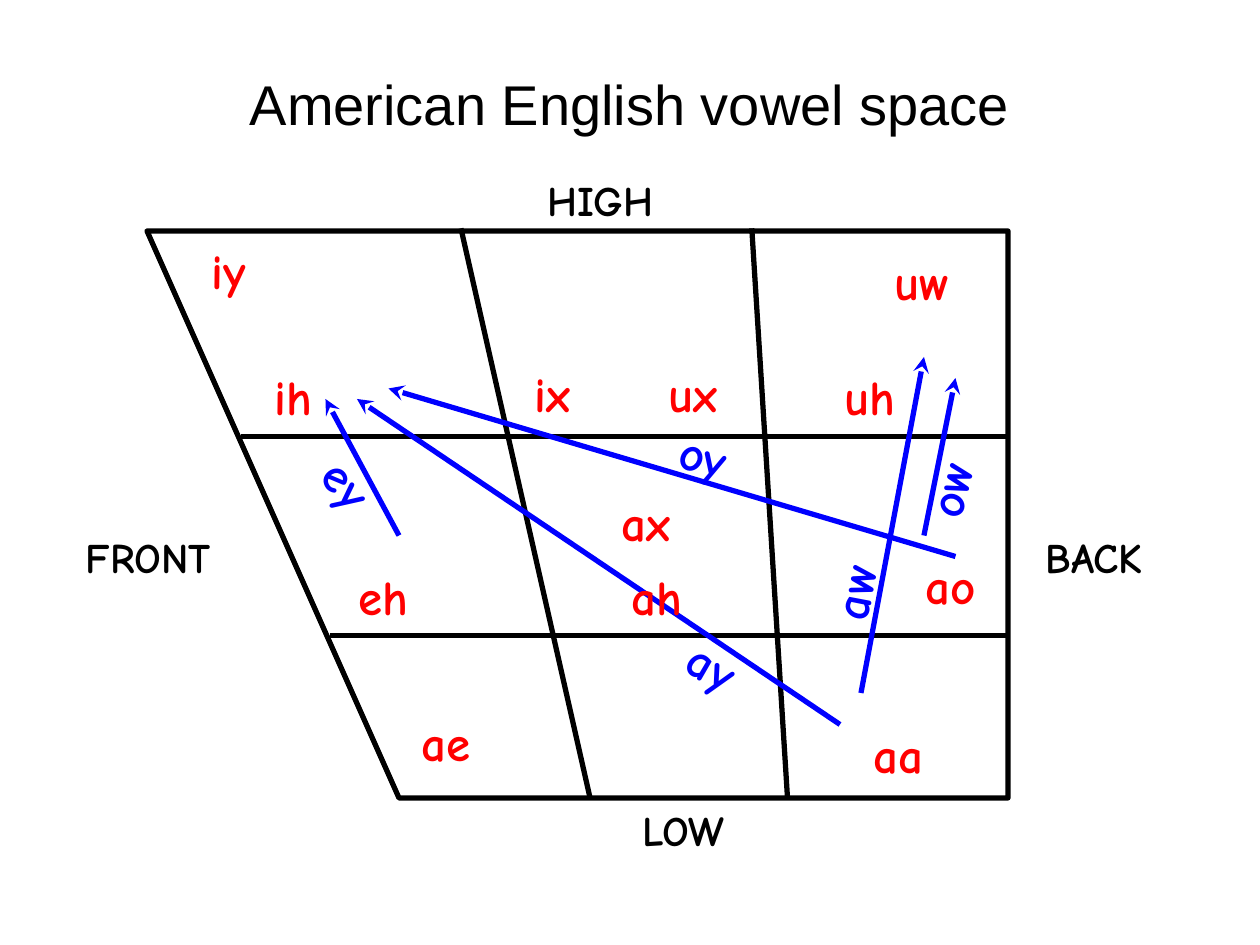
from pptx import Presentation
from pptx.dml.color import RGBColor
from pptx.enum.shapes import MSO_CONNECTOR
from pptx.enum.text import MSO_ANCHOR, MSO_AUTO_SIZE, PP_ALIGN
from pptx.oxml.ns import qn
from pptx.util import Inches, Pt
from lxml.etree import SubElement

TITLE = "American English vowel space"
COLORS = {"frame": "000000", "diphthong": "0000FF", "vowel": "FF0000"}
LABEL_FONT = "Comic Neue"

# All places are cells of a grid of 120 columns by 90 rows
COLUMNS, ROWS = 120, 90
CELL = Inches(10) / COLUMNS

TOP, BOTTOM, BACK_EDGE = 21.75, 76, 96
FRONT_EDGE = (14, 38.4)  # column at the top, column at the bottom
HEIGHT_ROWS = (41.6, 60.5)
DEPTH_DIVIDERS = ((43.9, 56.2), (71.6, 75))  # column at the top, at the bottom

# text, left, top, width
SIDES = [
    ("FRONT", 7, 50, 16.7),
    ("BACK", 98.4, 50, 12.7),
    ("HIGH", 51, 16, 13.4),
    ("LOW", 60, 76, 12),
]
VOWELS = [
    ("iy", 19, 22.3, 6.4),
    ("ih", 25, 34.3, 6.4),
    ("eh", 33, 53.4, 7.7),
    ("ae", 39, 67.3, 7.6),
    ("aa", 82, 68.4, 7.6),
    ("ao", 87, 52.3, 7.4),
    ("uw", 84, 23.4, 8),
    ("uh", 79.2, 34.3, 7.6),
    ("ah", 59, 53.4, 7.7),
    ("ax", 58, 46.3, 7.8),
    ("ix", 49.7, 34, 6.5),
    ("ux", 62.5, 34, 7.6),
]
# label, rotation, glide start, glide end
DIPHTHONGS = [
    (("ey", 29.6, 43, 7.6), 52.8, (38, 51), (31, 38)),
    (("ow", 86.5, 43, 8), 284.2, (88, 51), (91, 36)),
    (("aw", 77.3, 52.6, 8.2), 280.7, (82, 66), (88, 34)),
    (("oy", 63.6, 40, 7.4), 15.3, (91, 53), (37, 37)),
    (("ay", 64.4, 60.2, 7.6), 29.9, (80, 69), (34, 38)),
]


def cells(*counts):
    return [round(count * CELL) for count in counts]


def color(role):
    return RGBColor.from_string(COLORS[role])


def add_label(group, label, role, size, rotation=0):
    text, left, top, width = label
    box = group.shapes.add_textbox(*cells(left, top, width, size * 0.245))
    box.rotation = rotation
    frame = box.text_frame
    frame.word_wrap = False
    frame.auto_size = MSO_AUTO_SIZE.SHAPE_TO_FIT_TEXT
    paragraph = frame.paragraphs[0]
    paragraph.text = text
    font = paragraph.font
    font.name, font.size, font.bold = LABEL_FONT, Pt(size), True
    font.color.rgb = color(role)


def add_line(group, start, end, role, arrow=False):
    line = group.shapes.add_connector(MSO_CONNECTOR.STRAIGHT, *cells(*start, *end))
    line.line.color.rgb = color(role)
    line.line.width = Pt(3)
    if arrow:
        SubElement(line.line._get_or_add_ln(), qn("a:tailEnd"), type="stealth")
    SubElement(line._element.spPr, qn("a:effectLst"))


def front_column(row):
    """Column where the slanted front edge crosses a row."""
    top_column, bottom_column = FRONT_EDGE
    return top_column + (bottom_column - top_column) * (row - TOP) / (BOTTOM - TOP)


def add_vowel_frame(group):
    corners = [(BACK_EDGE, TOP), (BACK_EDGE, BOTTOM), (FRONT_EDGE[1], BOTTOM)]
    builder = group.shapes.build_freeform(FRONT_EDGE[0], TOP, scale=CELL)
    builder.add_line_segments(corners, close=True)
    outline = builder.convert_to_shape()
    outline.shadow.inherit = False
    outline.fill.background()
    outline.line.color.rgb = color("frame")
    outline.line.width = Pt(3)
    for row in HEIGHT_ROWS:
        add_line(group, (front_column(row), row), (BACK_EDGE, row), "frame")
    for top_column, bottom_column in DEPTH_DIVIDERS:
        add_line(group, (bottom_column, BOTTOM), (top_column, TOP), "frame")
    for side in SIDES:
        add_label(group, side, "frame", 24)


def main():
    deck = Presentation()
    deck.slide_width, deck.slide_height = cells(COLUMNS, ROWS)
    slide = deck.slides.add_slide(deck.slide_layouts[5])

    title = slide.shapes.title
    title.left, title.top, title.width, title.height = cells(6, 3.6, 108, 12.4)
    title.text_frame.vertical_anchor = MSO_ANCHOR.MIDDLE
    heading = title.text_frame.paragraphs[0]
    heading.text = TITLE
    heading.alignment = PP_ALIGN.CENTER
    heading.font.name, heading.font.size = "Arial", Pt(32)
    heading.font.color.rgb = color("frame")

    add_vowel_frame(slide.shapes.add_group_shape())

    glides = slide.shapes.add_group_shape()
    for label, rotation, start, end in DIPHTHONGS:
        add_label(glides, label, "diphthong", 28, rotation)
        add_line(glides, start, end, "diphthong", arrow=True)

    vowels = slide.shapes.add_group_shape()
    for vowel in VOWELS:
        add_label(vowels, vowel, "vowel", 28)

    deck.save("out.pptx")


if __name__ == "__main__":
    main()
